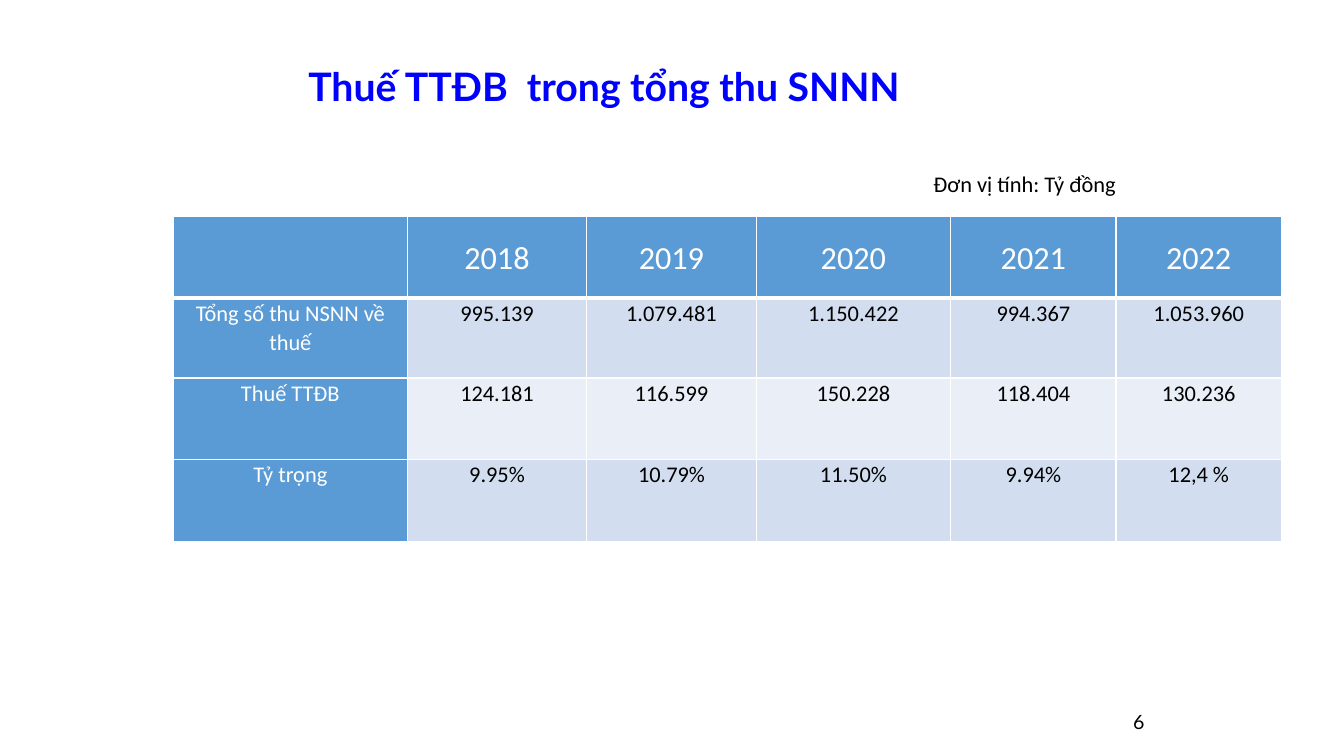
"""Build the slide on special consumption tax within total budget revenue."""
from dataclasses import dataclass

from lxml import etree
from pptx import Presentation
from pptx import util as u
from pptx.dml.color import RGBColor
from pptx.enum import text
from pptx.oxml import ns

BLUE = RGBColor(0x00, 0x00, 0xFF)
BLACK = RGBColor(0x00, 0x00, 0x00)
WHITE = RGBColor(0xFF, 0xFF, 0xFF)
HEADER = RGBColor(0x5B, 0x9B, 0xD5)
BANDS = (RGBColor(0xD2, 0xDE, 0xEF), RGBColor(0xEA, 0xEF, 0xF7))

COLUMN_WIDTHS = (2.32, 1.78, 1.68, 1.93, 1.64, 1.64)
ROW_HEIGHTS = (0.81, 0.79, 0.81, 0.81)
REVENUE = (
    ("", "2018", "2019", "2020", "2021", "2022"),
    ("Tổng số thu NSNN về thuế", "995.139", "1.079.481", "1.150.422", "994.367", "1.053.960"),
    ("Thuế TTĐB", "124.181", "116.599", "150.228", "118.404", "130.236"),
    ("Tỷ trọng", "9.95%", "10.79%", "11.50%", "9.94%", "12,4 %"),
)


@dataclass(frozen=True)
class Label:
    """A line of text and its box, in inches."""

    words: str
    left: float
    top: float
    width: float
    height: float
    size: int
    font: str
    color: RGBColor = BLACK
    bold: bool = False
    anchor: text.MSO_ANCHOR = text.MSO_ANCHOR.BOTTOM
    align: text.PP_ALIGN = text.PP_ALIGN.LEFT


LABELS = (
    Label("6", 9.37, 6.83, 2.08, 0.5, 14, "Lato", align=text.PP_ALIGN.RIGHT),
    Label("Thuế TTĐB  trong tổng thu SNNN", 2.96, 0.38, 8.8, 0.95, 28, "Lato",
          BLUE, True, text.MSO_ANCHOR.MIDDLE),
    Label("Đơn vị tính: Tỷ đồng", 9.16, 1.09, 2.99, 0.91, 16, "Calibri"),
)


def style_font(para, name: str, size: int, color: RGBColor, bold: bool = False) -> None:
    """Set the font of a whole paragraph."""
    para.font.name = name
    para.font.size = u.Pt(size)
    para.font.color.rgb = color
    para.font.bold = bold


def draw_label(page, label: Label) -> None:
    """Add one text box to the page."""
    box = page.shapes.add_textbox(
        u.Inches(label.left), u.Inches(label.top), u.Inches(label.width), u.Inches(label.height))
    frame = box.text_frame
    frame.word_wrap = True
    frame.vertical_anchor = label.anchor
    para = frame.paragraphs[0]
    para.text = label.words
    para.alignment = label.align
    style_font(para, label.font, label.size, label.color, label.bold)


def draw_borders(cell, bottom_width: int) -> None:
    """Give a cell white borders, with its own width below."""
    properties = cell._tc.get_or_add_tcPr()
    for side, width in (("L", 1), ("R", 1), ("T", 1), ("B", bottom_width)):
        line = etree.SubElement(properties, ns.qn(f"a:ln{side}"), w=str(u.Pt(width)))
        fill = etree.SubElement(line, ns.qn("a:solidFill"))
        etree.SubElement(fill, ns.qn("a:srgbClr"), val=str(WHITE))


def fill_cell(cell, words: str, row: int, column: int) -> None:
    """Write and style one table cell by its place in the grid."""
    is_top = row == 0
    is_header = is_top or column == 0
    draw_borders(cell, 3 if is_top else 1)
    cell.fill.solid()
    cell.fill.fore_color.rgb = HEADER if is_header else BANDS[(row - 1) % 2]
    cell.margin_left = cell.margin_right = u.Inches(0.07)
    cell.margin_top = cell.margin_bottom = 0
    cell.vertical_anchor = text.MSO_ANCHOR.MIDDLE if is_top else text.MSO_ANCHOR.TOP
    para = cell.text_frame.paragraphs[0]
    para.text = words
    para.alignment = text.PP_ALIGN.CENTER
    para.line_spacing = 1.07
    para.space_after = u.Pt(8)
    style_font(para, "Calibri", 23 if is_top else 16, WHITE if is_header else BLACK)


def draw_revenue_table(page) -> None:
    """Add the revenue table to the page."""
    table = page.shapes.add_table(
        len(REVENUE), len(COLUMN_WIDTHS), u.Inches(1.72), u.Inches(2.15),
        u.Inches(sum(COLUMN_WIDTHS)), u.Inches(sum(ROW_HEIGHTS))).table
    table.first_row = table.horz_banding = False
    for column, width in zip(table.columns, COLUMN_WIDTHS):
        column.width = u.Inches(width)
    for row, height in zip(table.rows, ROW_HEIGHTS):
        row.height = u.Inches(height)
    for row_index, entries in enumerate(REVENUE):
        for column_index, words in enumerate(entries):
            fill_cell(table.cell(row_index, column_index), words, row_index, column_index)


def main() -> None:
    """Create and save the deck."""
    deck = Presentation()
    deck.slide_width = u.Inches(13.33)
    deck.slide_height = u.Inches(7.5)
    page = deck.slides.add_slide(deck.slide_layouts[6])
    for label in LABELS:
        draw_label(page, label)
    draw_revenue_table(page)
    deck.save("out.pptx")


if __name__ == "__main__":
    main()
